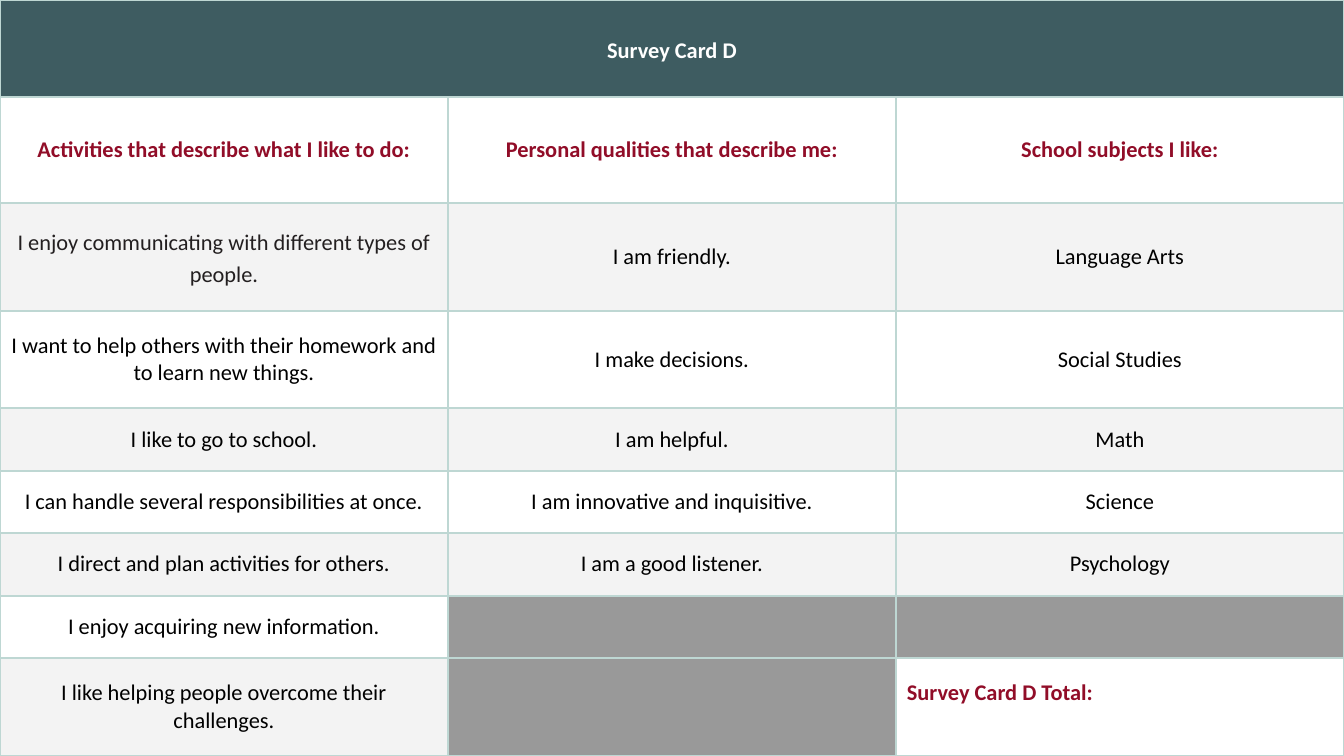
from lxml.etree import SubElement
from pptx import Presentation
from pptx.dml.color import RGBColor
from pptx.enum.text import MSO_ANCHOR, PP_ALIGN
from pptx.oxml.ns import qn
from pptx.util import Emu, Pt

TEAL = RGBColor(0x3E, 0x5C, 0x61)
CRIMSON = RGBColor(0x91, 0x0D, 0x28)
INK = RGBColor(0x23, 0x1F, 0x20)
BLACK = RGBColor(0, 0, 0)
WHITE = RGBColor(0xFF, 0xFF, 0xFF)
PALE = RGBColor(0xF3, 0xF3, 0xF3)
GRAY = RGBColor(0x99, 0x99, 0x99)
MINT = RGBColor(0xBE, 0xD7, 0xD3)

WIDTH, HEIGHT, MARGIN = 1344, 756, 11
ROW_HEIGHTS = [97, 106, 108, 97, 63, 62, 63, 62, 98]
ROWS = [
    ["Survey Card D", "", ""],
    ["Activities that describe what I like to do:",
     "Personal qualities that describe me:", "School subjects I like:"],
    ["I enjoy communicating with different types of people.",
     "I am friendly.", "Language Arts"],
    ["I want to help others with their homework and to learn new things.",
     "I make decisions.", "Social Studies"],
    ["I like to go to school.", "I am helpful.", "Math"],
    ["I can handle several responsibilities at once.",
     "I am innovative and inquisitive.", "Science"],
    ["I direct and plan activities for others.",
     "I am a good listener.", "Psychology"],
    ["I enjoy acquiring new information.", "", ""],
    ["I like helping people overcome their challenges.", "",
     "Survey Card D Total:"],
]
TOTAL = (8, 2)

# Formats that depart from the body text, by cell
HEADING = {"color": CRIMSON, "bold": True, "paragraph": {"space_before": Pt(10)}}
SPECIAL = {
    (0, 0): {"color": WHITE, "bold": True,
             "paragraph": {"line_spacing": 1.15, "space_after": Pt(6)}},
    (2, 0): {"color": INK, "paragraph": {"line_spacing": 1.15}},
    TOTAL: {"color": CRIMSON, "bold": True,
            "paragraph": {"space_before": Pt(10), "alignment": PP_ALIGN.LEFT}},
}
SPECIAL.update({(1, column): HEADING for column in range(3)})


def px(length):
    return Emu(round(length * 914400 / 134.4))


def add_borders(cell):
    properties = cell._tc.get_or_add_tcPr()
    for index, side in enumerate(("a:lnL", "a:lnR", "a:lnT", "a:lnB")):
        line = SubElement(properties, qn(side), w=str(Pt(1)))
        fill = SubElement(line, qn("a:solidFill"))
        SubElement(fill, qn("a:srgbClr"), val=str(MINT))
        properties.insert(index, line)


presentation = Presentation()
presentation.slide_width = px(WIDTH)
presentation.slide_height = px(HEIGHT)
slide = presentation.slides.add_slide(presentation.slide_layouts[6])

# Table grid
table = slide.shapes.add_table(
    len(ROWS), 3, 0, 0, px(WIDTH), px(HEIGHT)).table
table.first_row = False
table.horz_banding = False
for column in table.columns:
    column.width = px(WIDTH // 3)
for row, height in zip(table.rows, ROW_HEIGHTS):
    row.height = px(height)
table.cell(0, 0).merge(table.cell(0, 2))

# Cells
for row_index, texts in enumerate(ROWS):
    for column_index, text in enumerate(texts):
        position = (row_index, column_index)
        cell = table.cell(*position)
        add_borders(cell)

        # Fill: header, unused cells, then striped rows
        if row_index == 0:
            color = TEAL
        elif not text:
            color = GRAY
        elif row_index % 2 or position == TOTAL:
            color = WHITE
        else:
            color = PALE
        cell.fill.solid()
        cell.fill.fore_color.rgb = color
        if not text:
            continue

        # Text
        special = SPECIAL.get(position, {})
        cell.vertical_anchor = MSO_ANCHOR.MIDDLE
        for side in ("left", "right", "top", "bottom"):
            setattr(cell, f"margin_{side}", px(MARGIN))
        paragraph = cell.text_frame.paragraphs[0]
        paragraph_format = {"alignment": PP_ALIGN.CENTER,
                            **special.get("paragraph", {})}
        for name, value in paragraph_format.items():
            setattr(paragraph, name, value)
        run = paragraph.add_run()
        run.text = text
        font_format = {"name": "Calibri", "size": Pt(12),
                       "bold": special.get("bold", False)}
        for name, value in font_format.items():
            setattr(run.font, name, value)
        run.font.color.rgb = special.get("color", BLACK)

# The total sits above the middle of its cell
table.cell(*TOTAL).margin_bottom = px(38)

presentation.save("out.pptx")
